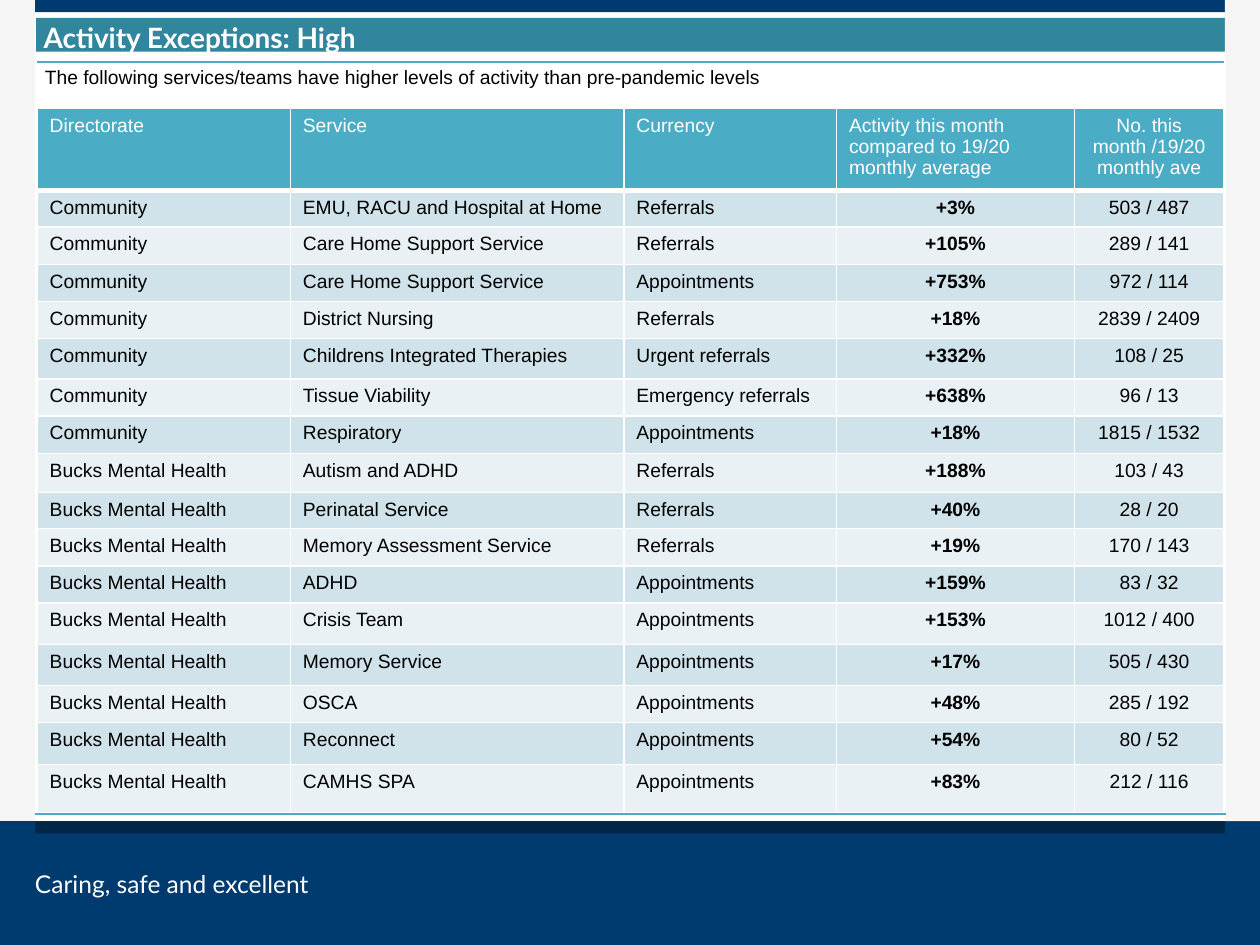
from lxml import etree
from pptx import Presentation
from pptx.dml.color import RGBColor
from pptx.enum.shapes import MSO_SHAPE
from pptx.enum.text import MSO_ANCHOR, MSO_AUTO_SIZE, PP_ALIGN
from pptx.oxml.ns import qn
from pptx.util import Pt

RECT = MSO_SHAPE.RECTANGLE
LEFT, CENTER = PP_ALIGN.LEFT, PP_ALIGN.CENTER
TOP, MIDDLE = MSO_ANCHOR.TOP, MSO_ANCHOR.MIDDLE
NO_FIT = MSO_AUTO_SIZE.NONE

COLORS = {
    "side": "F5F5F5", "navy": "003B6F", "dark": "002648", "teal": "31859C",
    "header": "4BACC6", "odd": "D0E3EA", "even": "E9F1F5",
    "white": "FFFFFF", "black": "000000",
}


def write(tf, text, size, font, color, bold=False, align=LEFT):
    p = tf.paragraphs[0]
    p.alignment = align
    r = p.add_run()
    r.text = text
    for name, value in {"size": Pt(size), "name": font, "bold": bold}.items():
        setattr(r.font, name, value)
    r.font.color.rgb = RGBColor.from_string(COLORS[color])
    return p


def set_borders(cell, borders):
    tcPr = cell._tc.get_or_add_tcPr()
    for side, (color, width) in borders.items():
        ln = etree.SubElement(tcPr, qn(f"a:ln{side}"), w=str(Pt(width)))
        fill = etree.SubElement(ln, qn("a:solidFill"))
        etree.SubElement(fill, qn("a:srgbClr"), val=COLORS[color])


prs = Presentation()
prs.slide_width, prs.slide_height = Pt(720), Pt(540)
s = prs.slides.add_slide(prs.slide_layouts[5])

BANDS = [
    (0, 0, 20, 469.3, "side"),
    (0, 469.3, 720, 70.7, "navy"),
    (20, 469.3, 680, 7, "dark"),
    (20, 0, 680, 7, "navy"),
    (700, 0, 20, 469.3, "side"),
]
for x, y, w, h, color in BANDS:
    sp = s.shapes.add_shape(RECT, Pt(x), Pt(y), Pt(w), Pt(h))
    sp.shadow.inherit = False
    sp.fill.solid()
    sp.fill.fore_color.rgb = RGBColor.from_string(COLORS[color])
    sp.line.fill.background()

motto = s.shapes.add_textbox(Pt(20), Pt(496.8), Pt(221), Pt(17))
tf = motto.text_frame
tf.margin_left = tf.margin_right = tf.margin_top = tf.margin_bottom = 0
tf.word_wrap = True
write(tf, "Caring, safe and excellent", 14, "Lato", "white")

title = s.shapes.title
title.left, title.top, title.width, title.height = Pt(20.6), Pt(10.2), Pt(679.4), Pt(19.3)
title.fill.solid()
title.fill.fore_color.rgb = RGBColor.from_string(COLORS["teal"])
tf = title.text_frame
tf.auto_size = NO_FIT
tf.vertical_anchor = MIDDLE
tf.margin_left = tf.margin_right = Pt(4.3)
tf.margin_top = tf.margin_bottom = Pt(2.2)
p = write(tf, "Activity Exceptions: High", 16, "Lato", "white", bold=True)
p.line_spacing = 1.15
p.space_after = Pt(5.6)

frame = s.shapes.add_table(2, 1, Pt(20.6), Pt(35.3), Pt(679.4), Pt(429.8)).table
frame.first_row = frame.horz_banding = False
frame.rows[0].height, frame.rows[1].height = Pt(38.2), Pt(391.6)
intro, panel = frame.cell(0, 0), frame.cell(1, 0)
intro.margin_left = intro.margin_right = Pt(5)
intro.margin_top = intro.margin_bottom = Pt(2.9)
set_borders(intro, {"T": ("header", 1)})
set_borders(panel, {"B": ("header", 1)})
intro.fill.background()
panel.fill.solid()
panel.fill.fore_color.rgb = RGBColor.from_string(COLORS["white"])
write(intro.text_frame, "The following services/teams have higher levels of activity "
      "than pre-pandemic levels", 11, "Arial", "black")

HEADINGS = ("Directorate", "Service", "Currency",
            "Activity this month compared to 19/20 monthly average",
            "No. this month /19/20 monthly ave")
COMMUNITY = [
    ("EMU, RACU and Hospital at Home", "Referrals", "+3%", "503 / 487"),
    ("Care Home Support Service", "Referrals", "+105%", "289 / 141"),
    ("Care Home Support Service", "Appointments", "+753%", "972 / 114"),
    ("District Nursing", "Referrals", "+18%", "2839 / 2409"),
    ("Childrens Integrated Therapies", "Urgent referrals", "+332%", "108 / 25"),
    ("Tissue Viability", "Emergency referrals", "+638%", "96 / 13"),
    ("Respiratory", "Appointments", "+18%", "1815 / 1532"),
]
MENTAL_HEALTH = [
    ("Autism and ADHD", "Referrals", "+188%", "103 / 43"),
    ("Perinatal Service", "Referrals", "+40%", "28 / 20"),
    ("Memory Assessment Service", "Referrals", "+19%", "170 / 143"),
    ("ADHD", "Appointments", "+159%", "83 / 32"),
    ("Crisis Team", "Appointments", "+153%", "1012 / 400"),
    ("Memory Service", "Appointments", "+17%", "505 / 430"),
    ("OSCA", "Appointments", "+48%", "285 / 192"),
    ("Reconnect", "Appointments", "+54%", "80 / 52"),
    ("CAMHS SPA", "Appointments", "+83%", "212 / 116"),
]
ROWS = ([HEADINGS] + [("Community", *row) for row in COMMUNITY]
        + [("Bucks Mental Health", *row) for row in MENTAL_HEALTH])
WIDTHS = [144.7, 190.6, 121.5, 136.1, 85.3]
HEIGHTS = [46.9, 21, 21.3, 21.2, 21.2, 23.2, 21.2, 21.5, 22.3, 20.5,
           21.3, 21.3, 23.7, 23.5, 21, 24, 27.5]

table = s.shapes.add_table(len(ROWS), len(WIDTHS), Pt(21.2), Pt(61.9),
                           Pt(sum(WIDTHS)), Pt(sum(HEIGHTS))).table
table.first_row = table.horz_banding = False
for column, width in zip(table.columns, WIDTHS):
    column.width = Pt(width)
for i, (values, height) in enumerate(zip(ROWS, HEIGHTS)):
    table.rows[i].height = Pt(height)
    head = i == 0
    fill = "header" if head else "odd" if i % 2 else "even"
    borders = {side: ("white", 1) for side in "LRTB"}
    if head:
        borders["B"] = ("white", 3)
    elif i == 1:
        borders["T"] = ("white", 3)
    for j, value in enumerate(values):
        cell = table.cell(i, j)
        set_borders(cell, borders)
        cell.fill.solid()
        cell.fill.fore_color.rgb = RGBColor.from_string(COLORS[fill])
        cell.vertical_anchor = TOP
        centered = j == 4 or (j == 3 and not head)
        write(cell.text_frame, value, 11, "Arial", "white" if head else "black",
              bold=j == 3 and not head, align=CENTER if centered else LEFT)

prs.save("out.pptx")
